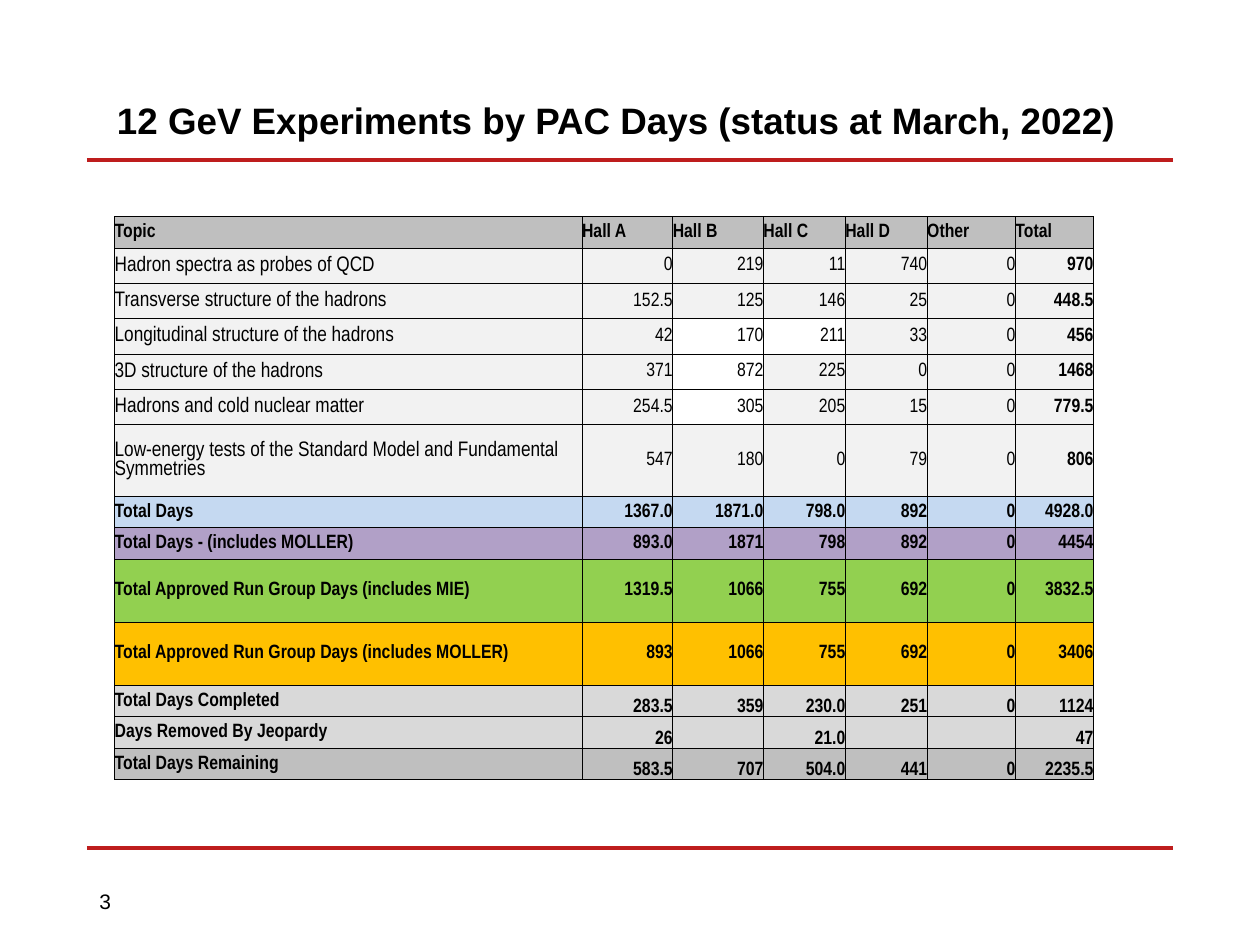
from dataclasses import dataclass

from lxml import etree
from pptx import Presentation
from pptx.dml.color import RGBColor
from pptx.enum.shapes import MSO_CONNECTOR
from pptx.enum.text import MSO_ANCHOR, PP_ALIGN
from pptx.oxml.ns import qn
from pptx.util import Inches, Pt

STRAIGHT = MSO_CONNECTOR.STRAIGHT
MIDDLE, BOTTOM = MSO_ANCHOR.MIDDLE, MSO_ANCHOR.BOTTOM
LEFT, RIGHT = PP_ALIGN.LEFT, PP_ALIGN.RIGHT


@dataclass(frozen=True)
class Theme:
    heading_font: str = "Arial"
    table_font: str = "Arial Narrow"
    ink: str = "000000"
    rule: str = "BE1D1D"
    white: str = "FFFFFF"
    header: str = "BFBFBF"
    topic: str = "F2F2F2"
    all_days: str = "C5D9F1"
    moller_days: str = "B1A0C7"
    mie_groups: str = "92D050"
    moller_groups: str = "FFC000"
    progress: str = "D9D9D9"
    title_size: float = 21
    topic_size: float = 12
    cell_size: float = 11
    number_size: float = 12
    rule_width: float = 2.5
    border_width: float = 0.5


THEME = Theme()

TITLE = "12 GeV Experiments by PAC Days (status at March, 2022)"
PAGE_NUMBER = "3"
HEADER = ("Topic", "Hall A", "Hall B", "Hall C", "Hall D", "Other", "Total")
TOPICS = [
    ("Hadron spectra as probes of QCD", "0", "219", "11", "740", "0", "970"),
    ("Transverse structure of the hadrons", "152.5", "125", "146", "25", "0", "448.5"),
    ("Longitudinal structure of the hadrons", "42", "170", "211", "33", "0", "456"),
    ("3D structure of the hadrons", "371", "872", "225", "0", "0", "1468"),
    ("Hadrons and cold nuclear matter", "254.5", "305", "205", "15", "0", "779.5"),
    ("Low-energy tests of the Standard Model and Fundamental Symmetries",
     "547", "180", "0", "79", "0", "806"),
]
TOTALS = [
    ("Total Days", "1367.0", "1871.0", "798.0", "892", "0", "4928.0"),
    ("Total Days - (includes MOLLER)", "893.0", "1871", "798", "892", "0", "4454"),
    ("Total Approved Run Group Days (includes MIE)",
     "1319.5", "1066", "755", "692", "0", "3832.5"),
    ("Total Approved Run Group Days (includes MOLLER)",
     "893", "1066", "755", "692", "0", "3406"),
]
PROGRESS = [
    ("Total Days Completed", "283.5", "359", "230.0", "251", "0", "1124"),
    ("Days Removed By Jeopardy", "26", "", "21.0", "", "", "47"),
    ("Total Days Remaining", "583.5", "707", "504.0", "441", "0", "2235.5"),
]
CLOSING = ("",) * len(HEADER)
ROWS = [HEADER, *TOPICS, *TOTALS, *PROGRESS, CLOSING]
FIRST_TOTAL = 1 + len(TOPICS)
FIRST_PROGRESS = FIRST_TOTAL + len(TOTALS)
CLOSING_ROW = len(ROWS) - 1

ROW_FILLS = [THEME.header, *[THEME.topic] * len(TOPICS), THEME.all_days,
             THEME.moller_days, THEME.mie_groups, THEME.moller_groups,
             THEME.progress, THEME.progress, THEME.header, None]
WHITE_CELLS = {(3, 2), (3, 3), (4, 2), (5, 2)}
COLUMN_WIDTHS = [3.71, 0.72, 0.72, 0.65, 0.65, 0.7, 0.62]
ROW_HEIGHTS = [0.25, *[0.28] * 5, 0.57, 0.25, 0.25, 0.5, 0.5, *[0.25] * 3, 0.21]
RULE_LEFT, RULE_RIGHT = 0.69, 9.31
RULE_TOPS = (1.27, 6.73)


def style_text(frame, font, size, bold=False, align=LEFT):
    paragraph = frame.paragraphs[0]
    paragraph.alignment = align
    for run in paragraph.runs:
        run.font.name = font
        run.font.size = Pt(size)
        run.font.bold = bold
        run.font.color.rgb = RGBColor.from_string(THEME.ink)
    return paragraph


def add_label(slide, box, text, size, bold=False):
    frame = slide.shapes.add_textbox(*map(Inches, box)).text_frame
    frame.word_wrap = True
    frame.vertical_anchor = MIDDLE
    frame.text = text
    return style_text(frame, THEME.heading_font, size, bold)


def add_rule(slide, top):
    rule = slide.shapes.add_connector(
        STRAIGHT, *map(Inches, (RULE_LEFT, top, RULE_RIGHT, top)))
    rule.line.color.rgb = RGBColor.from_string(THEME.rule)
    rule.line.width = Pt(THEME.rule_width)
    etree.SubElement(rule._element.spPr, qn("a:effectLst"))


def add_borders(cell, sides):
    properties = cell._tc.get_or_add_tcPr()
    for side in ("L", "R", "T", "B"):
        border = etree.SubElement(properties, qn(f"a:ln{side}"),
                                  w=str(Pt(THEME.border_width)))
        if side in sides:
            fill = etree.SubElement(border, qn("a:solidFill"))
            etree.SubElement(fill, qn("a:srgbClr"), val=THEME.ink)
        else:
            etree.SubElement(border, qn("a:noFill"))


def fill_cell(cell, row, column, text):
    is_topic = 1 <= row < FIRST_TOTAL
    is_label = column == 0
    cell.margin_left = cell.margin_right = cell.margin_top = cell.margin_bottom = 0
    cell.vertical_anchor = BOTTOM if row >= FIRST_PROGRESS and not is_label else MIDDLE
    cell.text_frame.text = text
    paragraph = style_text(
        cell.text_frame, THEME.table_font,
        THEME.topic_size if is_topic and is_label else THEME.cell_size,
        bold=not is_topic or column == len(HEADER) - 1,
        align=LEFT if row == 0 or is_label else RIGHT)
    if not text:
        paragraph._p.get_or_add_endParaRPr().set("sz", str(THEME.cell_size * 100))
    add_borders(cell, "T" if row == CLOSING_ROW else "LRTB")
    color = THEME.white if (row, column) in WHITE_CELLS else ROW_FILLS[row]
    if color:
        cell.fill.solid()
        cell.fill.fore_color.rgb = RGBColor.from_string(color)
    else:
        cell.fill.background()


def add_days_table(slide):
    table = slide.shapes.add_table(
        len(ROWS), len(HEADER), Inches(0.91), Inches(1.72),
        Inches(sum(COLUMN_WIDTHS)), Inches(sum(ROW_HEIGHTS))).table
    table.first_row = table.horz_banding = False
    for column, width in zip(table.columns, COLUMN_WIDTHS):
        column.width = Inches(width)
    for row, height in zip(table.rows, ROW_HEIGHTS):
        row.height = Inches(height)
    for row, values in enumerate(ROWS):
        for column, text in enumerate(values):
            fill_cell(table.cell(row, column), row, column, text)


def main():
    deck = Presentation()
    deck.slide_width, deck.slide_height = Inches(10), Inches(7.5)
    slide = deck.slides.add_slide(deck.slide_layouts[6])
    for top in RULE_TOPS:
        add_rule(slide, top)
    title = add_label(slide, (0.83, 0.63, 8.62, 0.68), TITLE, THEME.title_size, bold=True)
    title.line_spacing = 0.9
    add_label(slide, (0.69, 6.95, 2.25, 0.4), PAGE_NUMBER, THEME.number_size)
    add_days_table(slide)
    deck.save("out.pptx")


if __name__ == "__main__":
    main()
